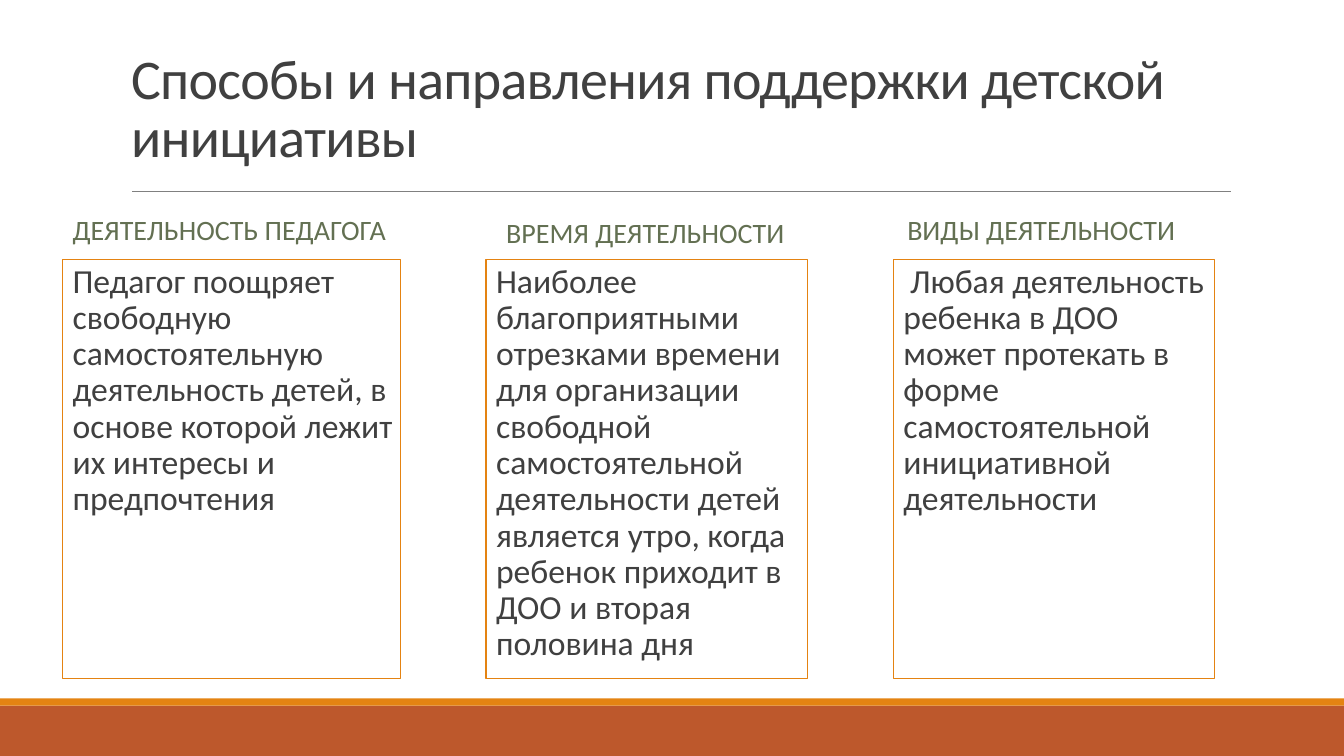
import pptx
import pptx.dml.color
import pptx.enum.shapes
import pptx.enum.text
import pptx.oxml
import pptx.oxml.ns
import pptx.util

Inches = pptx.util.Inches
Pt = pptx.util.Pt
RGBColor = pptx.dml.color.RGBColor
Anchor = pptx.enum.text.MSO_ANCHOR

FONT = "Calibri"
RUST = RGBColor(0xBD, 0x58, 0x2C)
ORANGE = RGBColor(0xE4, 0x83, 0x12)
GRAY = RGBColor(0x80, 0x80, 0x80)
DARK = RGBColor(0x40, 0x40, 0x40)
GREEN = RGBColor(0x63, 0x70, 0x52)

TITLE = "Способы и направления поддержки детской инициативы"
BOX_TOP, BOX_HEIGHT = 2.57, 4.16

# Heading, heading position, text, box left, box width
COLUMNS = [
    ("ДЕЯТЕЛЬНОСТЬ ПЕДАГОГА", (0.62, 2.02, 3.41, 0.56),
     "Педагог поощряет свободную самостоятельную деятельность детей, "
     "в основе которой лежит их интересы и предпочтения", 0.62, 3.35),
    ("ВРЕМЯ ДЕЯТЕЛЬНОСТИ", (4.92, 1.92, 3.09, 0.81),
     "Наиболее благоприятными отрезками времени для организации свободной "
     "самостоятельной деятельности детей является утро, когда ребенок "
     "приходит в ДОО и вторая половина дня", 4.82, 3.19),
    ("ВИДЫ ДЕЯТЕЛЬНОСТИ", (8.9, 1.89, 3.09, 0.81),
     "Любая деятельность ребенка в ДОО может протекать в форме "
     "самостоятельной инициативной деятельности", 8.86, 3.19),
]


def place(shape, left, top, width, height):
    shape.left, shape.top = Inches(left), Inches(top)
    shape.width, shape.height = Inches(width), Inches(height)


def add_band(slide, top, height, color):
    band = slide.shapes.add_shape(
        pptx.enum.shapes.MSO_SHAPE.RECTANGLE,
        Inches(0), Inches(top), Inches(13.33), Inches(height))
    band.shadow.inherit = False
    band.fill.solid()
    band.fill.fore_color.rgb = color
    band.line.fill.background()


def add_rule(slide):
    rule = slide.shapes.add_connector(
        pptx.enum.shapes.MSO_CONNECTOR.STRAIGHT,
        Inches(1.31), Inches(1.9), Inches(12.21), Inches(1.9))
    rule.line.color.rgb = GRAY
    rule.line.width = Pt(0.5)
    pptx.oxml.ns.qn("a:effectLst")
    rule._element.spPr.append(
        pptx.oxml.parse_xml(f'<a:effectLst {pptx.oxml.ns.nsdecls("a")}/>'))


def add_blank_bullet(paragraph):
    properties = paragraph._p.get_or_add_pPr()
    properties.set("marL", str(Inches(0.1)))
    properties.set("indent", str(Inches(-0.1)))
    namespace = pptx.oxml.ns.nsdecls("a")
    for xml in (f'<a:buClr {namespace}><a:srgbClr val="{ORANGE}"/></a:buClr>',
                f'<a:buChar {namespace} char=" "/>'):
        properties.append(pptx.oxml.parse_xml(xml))


def write(shape, text, size, color, anchor, spacing=0.9, bullet=False):
    frame = shape.text_frame
    frame.word_wrap = True
    frame.auto_size = pptx.enum.text.MSO_AUTO_SIZE.NONE
    frame.vertical_anchor = anchor
    paragraph = frame.paragraphs[0]
    if bullet:
        add_blank_bullet(paragraph)
    paragraph.alignment = pptx.enum.text.PP_ALIGN.LEFT
    paragraph.line_spacing = spacing
    paragraph.space_before = Pt(0)
    run = paragraph.add_run()
    run.text = text
    run.font.name = FONT
    run.font.size = Pt(size)
    run.font.bold = False
    run.font.color.rgb = color
    return run


def fill_title(shape):
    place(shape, 1.2, 0.31, 11, 1.59)
    run = write(shape, TITLE, 40, DARK, Anchor.MIDDLE, spacing=0.85)
    run._r.get_or_add_rPr().set("spc", "-50")


def fill_heading(shape, text, position):
    place(shape, *position)
    write(shape, text, 20, GREEN, Anchor.MIDDLE)


def fill_box(shape, text, left, width):
    place(shape, left, BOX_TOP, width, BOX_HEIGHT)
    shape.line.color.rgb = ORANGE
    shape.line.width = Pt(0.75)
    write(shape, text, 24, DARK, Anchor.TOP, bullet=True)
    frame = shape.text_frame
    frame.margin_left = frame.margin_right = Inches(0)


def main():
    presentation = pptx.Presentation()
    presentation.slide_width = Inches(13.33)
    presentation.slide_height = Inches(7.5)
    comparison_layout = presentation.slide_layouts[4]
    slide = presentation.slides.add_slide(comparison_layout)

    # Footer bands and title rule
    add_band(slide, 7, 0.5, RUST)
    add_band(slide, 6.93, 0.07, ORANGE)
    add_rule(slide)

    # Title
    fill_title(slide.shapes.title)

    # Two columns in placeholders, the third in text boxes
    holders = [slide.placeholders[index] for index in (1, 2, 3, 4)]
    holders += [slide.shapes.add_textbox(0, 0, 0, 0) for _ in range(2)]
    pairs = zip(holders[::2], holders[1::2])
    for (heading, box), column in zip(pairs, COLUMNS):
        heading_text, position, text, left, width = column
        fill_heading(heading, heading_text, position)
        fill_box(box, text, left, width)

    presentation.save("out.pptx")


if __name__ == "__main__":
    main()
